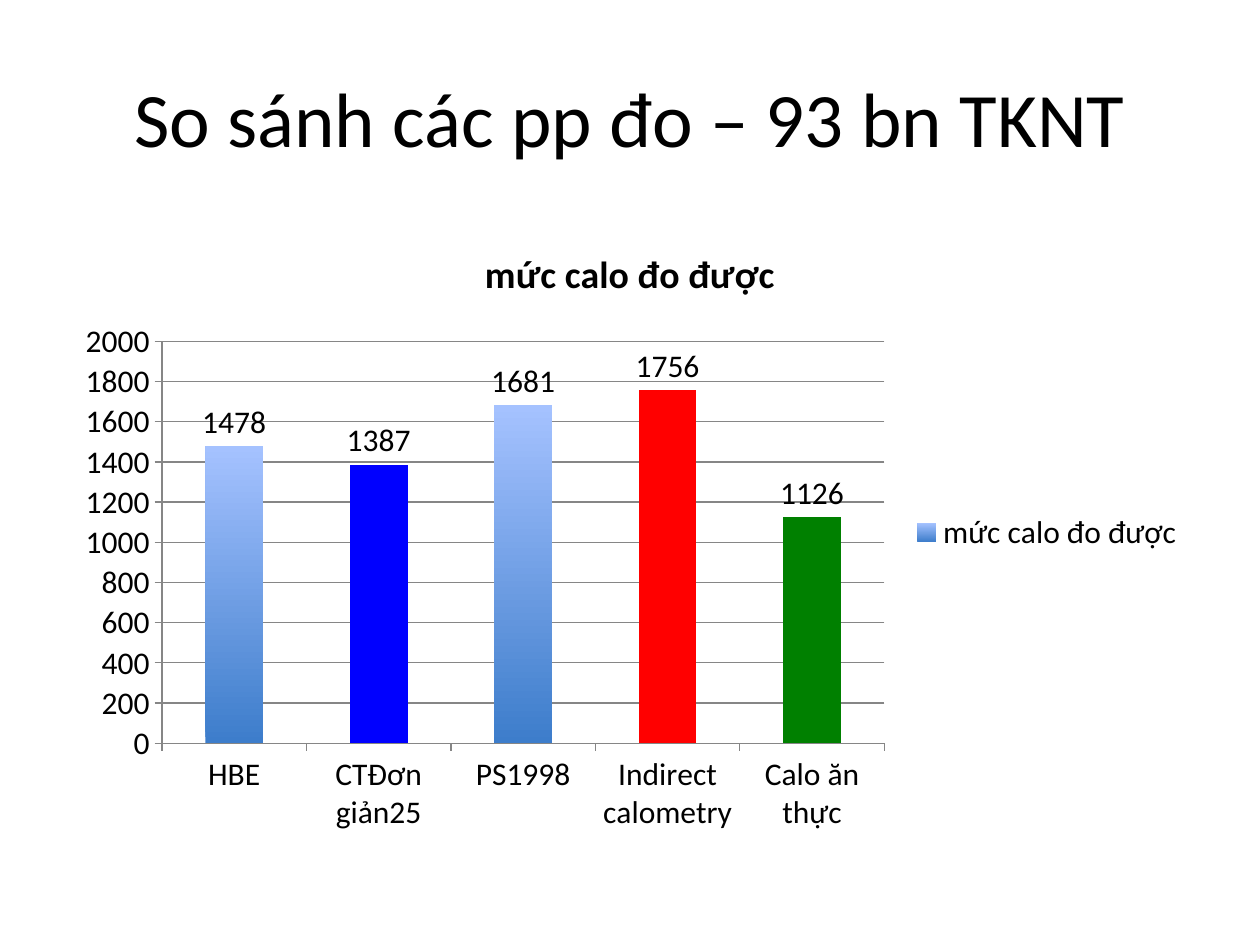
from pptx import Presentation
from pptx.chart.data import CategoryChartData
from pptx.dml.color import RGBColor
from pptx.enum.chart import (XL_CHART_TYPE, XL_LABEL_POSITION,
                             XL_LEGEND_POSITION, XL_TICK_MARK)
from pptx.enum.text import MSO_ANCHOR, PP_ALIGN
from pptx.util import Cm, Pt

# Content
TITLE = "So sánh các pp đo – 93 bn TKNT"
SERIES = "mức calo đo được"
BARS = [
    ("HBE", 1478, None),
    ("CTĐơn giản25", 1387, "blue"),
    ("PS1998", 1681, None),
    ("Indirect calometry", 1756, "red"),
    ("Calo ăn thực", 1126, "green"),
]

# Theme and layout
THEME = {
    "font": "Calibri",
    "size": {"title": 44, "chart": 18, "head": 21.6},
    "color": {"ink": "000000", "line": "868686", "top": "A5C2FF",
              "base": "3D7DCB", "blue": "0000FF", "red": "FF0000",
              "green": "008000"},
}
SLIDE = (Cm(25.4), Cm(19.05))
HEAD = (Cm(1.27), Cm(0.76), Cm(22.86), Cm(3.18))
PLOT = (Cm(1.27), Cm(4.45), Cm(22.86), Cm(12.57))


def tone(name):
    return RGBColor.from_string(THEME["color"][name])


def put(item, **vals):
    for key, val in vals.items():
        setattr(item, key, val)


def style(font, size, bold=False):
    put(font, name=THEME["font"], size=Pt(THEME["size"][size]), bold=bold)
    font.color.rgb = tone("ink")


def place(shape, box):
    put(shape, **dict(zip(("left", "top", "width", "height"), box)))


def add_title(slide):
    shape = slide.shapes.title
    place(shape, HEAD)
    frame = shape.text_frame
    put(frame, text=TITLE, vertical_anchor=MSO_ANCHOR.MIDDLE, word_wrap=True)
    para = frame.paragraphs[0]
    para.alignment = PP_ALIGN.CENTER
    style(para.runs[0].font, "title")


def add_plot(slide):
    names, vals, fills = zip(*BARS)
    data = CategoryChartData()
    data.categories = names
    data.add_series(SERIES, vals)
    chart = slide.shapes.add_chart(
        XL_CHART_TYPE.COLUMN_CLUSTERED, *PLOT, data).chart
    style(chart.font, "chart")

    # Heading and legend
    chart.has_title = True
    frame = chart.chart_title.text_frame
    frame.text = SERIES
    style(frame.paragraphs[0].runs[0].font, "head", True)
    chart.has_legend = True
    put(chart.legend, position=XL_LEGEND_POSITION.RIGHT,
        include_in_layout=False)

    # Axes and grid
    scale = chart.value_axis
    put(scale, minimum_scale=0, maximum_scale=2000, major_unit=200,
        has_major_gridlines=True)
    for axis in (chart.category_axis, scale):
        put(axis, major_tick_mark=XL_TICK_MARK.OUTSIDE,
            minor_tick_mark=XL_TICK_MARK.NONE)
    for part in (chart.category_axis, scale, scale.major_gridlines):
        line = part.format.line
        line.color.rgb = tone("line")
        line.width = Pt(0.75)

    # Bars and their values
    plot = chart.plots[0]
    put(plot, vary_by_categories=False, gap_width=150, has_data_labels=True)
    put(plot.data_labels, show_value=True,
        position=XL_LABEL_POSITION.OUTSIDE_END)
    bars = plot.series[0]
    bars.invert_if_negative = False
    fill = bars.format.fill
    fill.gradient()
    fill.gradient_angle = 90
    for stop, name in zip(fill.gradient_stops, ("base", "top")):
        stop.color.rgb = tone(name)
    for i, name in enumerate(fills):
        if name:
            fill = bars.points[i].format.fill
            fill.solid()
            fill.fore_color.rgb = tone(name)


def main():
    deck = Presentation()
    deck.slide_width, deck.slide_height = SLIDE
    slide = deck.slides.add_slide(deck.slide_layouts[5])
    add_title(slide)
    add_plot(slide)
    deck.save("out.pptx")


if __name__ == "__main__":
    main()
